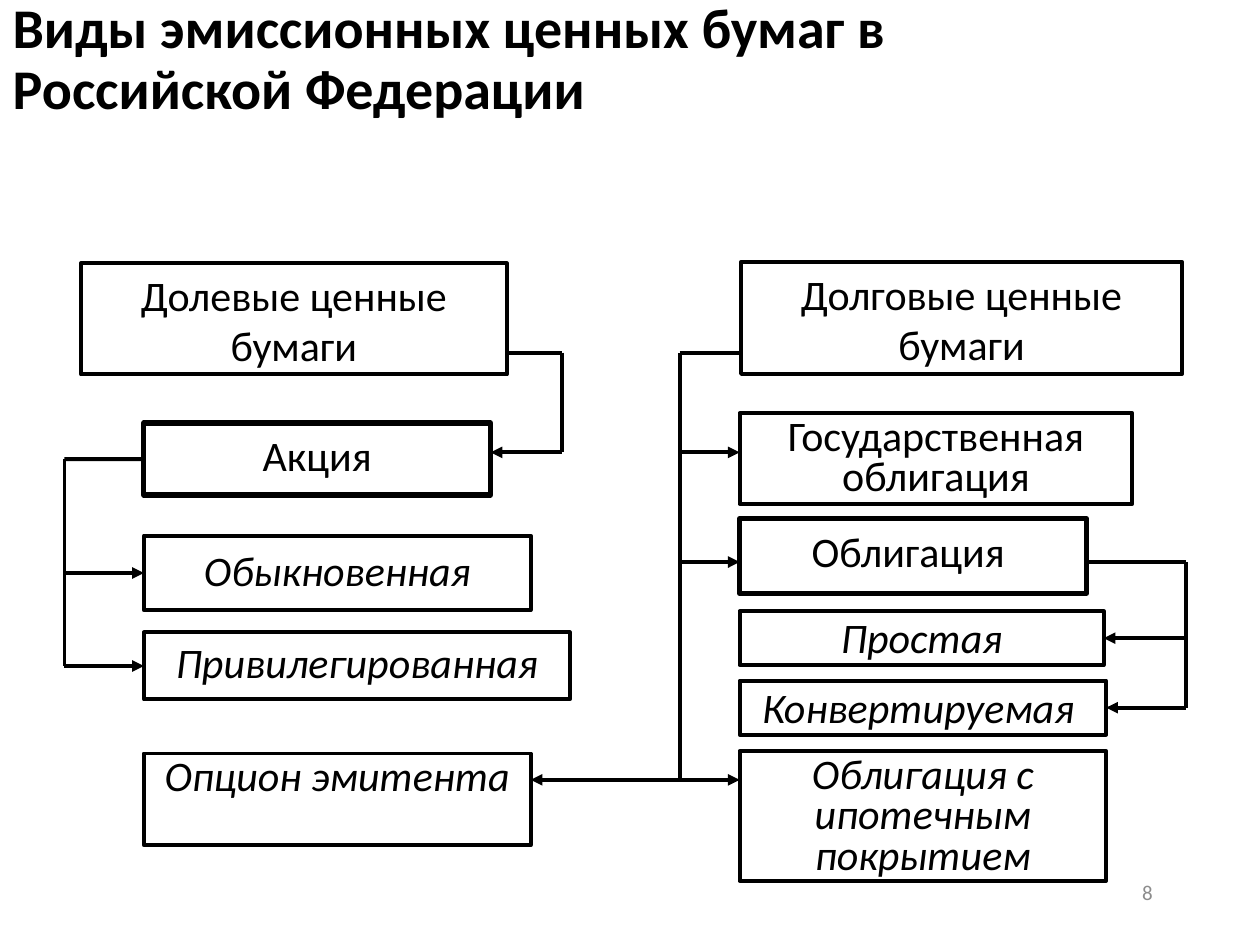
from lxml import etree
from pptx import Presentation
from pptx.dml.color import RGBColor
from pptx.enum.shapes import MSO_CONNECTOR, MSO_SHAPE
from pptx.enum.text import MSO_ANCHOR as Anchor, PP_ALIGN as Align
from pptx.oxml.ns import qn
from pptx.util import Cm, Pt

# Content
TITLE = "Виды эмиссионных ценных бумаг в Российской Федерации"
PAGE = "8"
SUBTYPE = {"italic": True}
LEFT, RIGHT = 1, 3  # connection sites of a rectangle

# key: (text, (left, top, width, height) in cm, line spacing, options)
BOXES = {
    "equity": ("Долевые ценные бумаги", (1.63, 5.31, 8.59, 2.24), 1, {}),
    "share": ("Акция", (2.9, 8.53, 6.99, 1.45), 1, {"heavy": True}),
    "common": ("Обыкновенная", (2.9, 10.8, 7.8, 1.5), 0.9, {**SUBTYPE, "middle": True}),
    "preferred": ("Привилегированная", (2.9, 12.75, 8.59, 1.35), 0.8,
                  {**SUBTYPE, "middle": True}),
    "option": ("Опцион эмитента", (2.9, 15.19, 7.8, 1.85), 0.8, SUBTYPE),
    "debt": ("Долговые ценные бумаги", (14.94, 5.28, 8.89, 2.26), 1, {}),
    "state": ("Государственная облигация", (14.91, 8.33, 7.92, 1.83), 0.8, {}),
    "bond": ("Облигация ", (14.91, 10.46, 6.99, 1.5), 1, {"heavy": True}),
    "plain": ("Простая", (14.91, 12.32, 7.34, 1.09), 0.9, SUBTYPE),
    "convertible": ("Конвертируемая ", (14.91, 13.72, 7.39, 1.09), 0.9, SUBTYPE),
    "mortgage": ("Облигация с ипотечным покрытием", (14.91, 15.14, 7.39, 2.62), 0.8,
                 SUBTYPE),
}

# (trunk x, trunk bottom or None for the last branch, branches);
# branch: (box, side, height or None for the middle of the side, arrow)
BRACKETS = [
    (1.3, None, [("share", LEFT, None, False), ("common", LEFT, None, True),
                 ("preferred", LEFT, None, True)]),
    (11.32, None, [("equity", RIGHT, 7.11, False), ("share", RIGHT, 9.12, True)]),
    (13.7, 15.72, [("debt", LEFT, 7.11, False), ("state", LEFT, 9.12, True),
                   ("bond", LEFT, 11.33, True)]),
    (23.9, None, [("bond", RIGHT, 11.33, False), ("plain", RIGHT, None, True),
                  ("convertible", RIGHT, None, True)]),
    (13.11, None, [("mortgage", LEFT, 15.72, True), ("option", RIGHT, 15.72, True)]),
]

THEME = {
    "font": "Calibri", "ink": RGBColor(0, 0, 0), "muted": RGBColor(0x8C, 0x8C, 0x8C),
    "title": Pt(32), "body": Pt(24), "page": Pt(12),
    "line": Pt(2.25), "heavy": Pt(3),
}


def write(shape, text, size, color, align, anchor, spacing=1, bold=False, italic=False):
    frame = shape.text_frame
    frame.text = text
    frame.word_wrap = True
    frame.vertical_anchor = anchor
    paragraph = frame.paragraphs[0]
    paragraph.alignment = align
    paragraph.line_spacing = spacing
    font = paragraph.runs[0].font
    font.name, font.size, font.color.rgb = THEME["font"], size, color
    font.bold, font.italic = bold, italic
    return paragraph


def add_box(slide, text, place, spacing, options):
    box = slide.shapes.add_shape(MSO_SHAPE.RECTANGLE, *map(Cm, place))
    box.shadow.inherit = False
    box.fill.background()
    box.line.color.rgb = THEME["ink"]
    box.line.width = THEME["heavy" if options.get("heavy") else "line"]
    write(box, text, THEME["body"], THEME["ink"], Align.CENTER,
          Anchor.MIDDLE if options.get("middle") else Anchor.TOP,
          spacing, italic=options.get("italic", False))
    return box


def add_line(slide, x1, y1, x2, y2, arrow=False):
    line = slide.shapes.add_connector(MSO_CONNECTOR.STRAIGHT, *map(Cm, (x1, y1, x2, y2)))
    line.line.color.rgb = THEME["ink"]
    line.line.width = THEME["line"]
    properties = line._element.spPr
    if arrow:
        etree.SubElement(properties.find(qn("a:ln")), qn("a:tailEnd"), type="triangle")
    etree.SubElement(properties, qn("a:effectLst"))
    return line


def add_bracket(slide, boxes, trunk_x, bottom, branches):
    heights = []
    for key, side, height, arrow in branches:
        left, top, width, tall = BOXES[key][1]
        y = top + tall / 2 if height is None else height
        edge = left if side == LEFT else left + width
        branch = add_line(slide, trunk_x, y, edge, y, arrow)
        if height is None:
            branch.end_connect(boxes[key], side)
        heights.append(y)
    bottom = bottom or heights[-1]
    if bottom > heights[0]:
        add_line(slide, trunk_x, heights[0], trunk_x, bottom)


def main():
    deck = Presentation()
    deck.slide_width, deck.slide_height = Cm(25.4), Cm(19.05)
    slide = deck.slides.add_slide(deck.slide_layouts[5])

    # Title
    title = slide.shapes.title
    title.left, title.top, title.width, title.height = map(Cm, (0, 0.05, 22.86, 2.36))
    heading = write(title, TITLE, THEME["title"], THEME["ink"], Align.LEFT,
                    Anchor.MIDDLE, 0.9, bold=True)
    heading.space_after = Pt(6)

    # Boxes and the brackets that join them
    boxes = {key: add_box(slide, *box) for key, box in BOXES.items()}
    for bracket in BRACKETS:
        add_bracket(slide, boxes, *bracket)

    # Page number
    page = slide.shapes.add_textbox(*map(Cm, (18.21, 17.35, 5.28, 1.27)))
    write(page, PAGE, THEME["page"], THEME["muted"], Align.RIGHT, Anchor.MIDDLE)

    deck.save("out.pptx")


if __name__ == "__main__":
    main()
